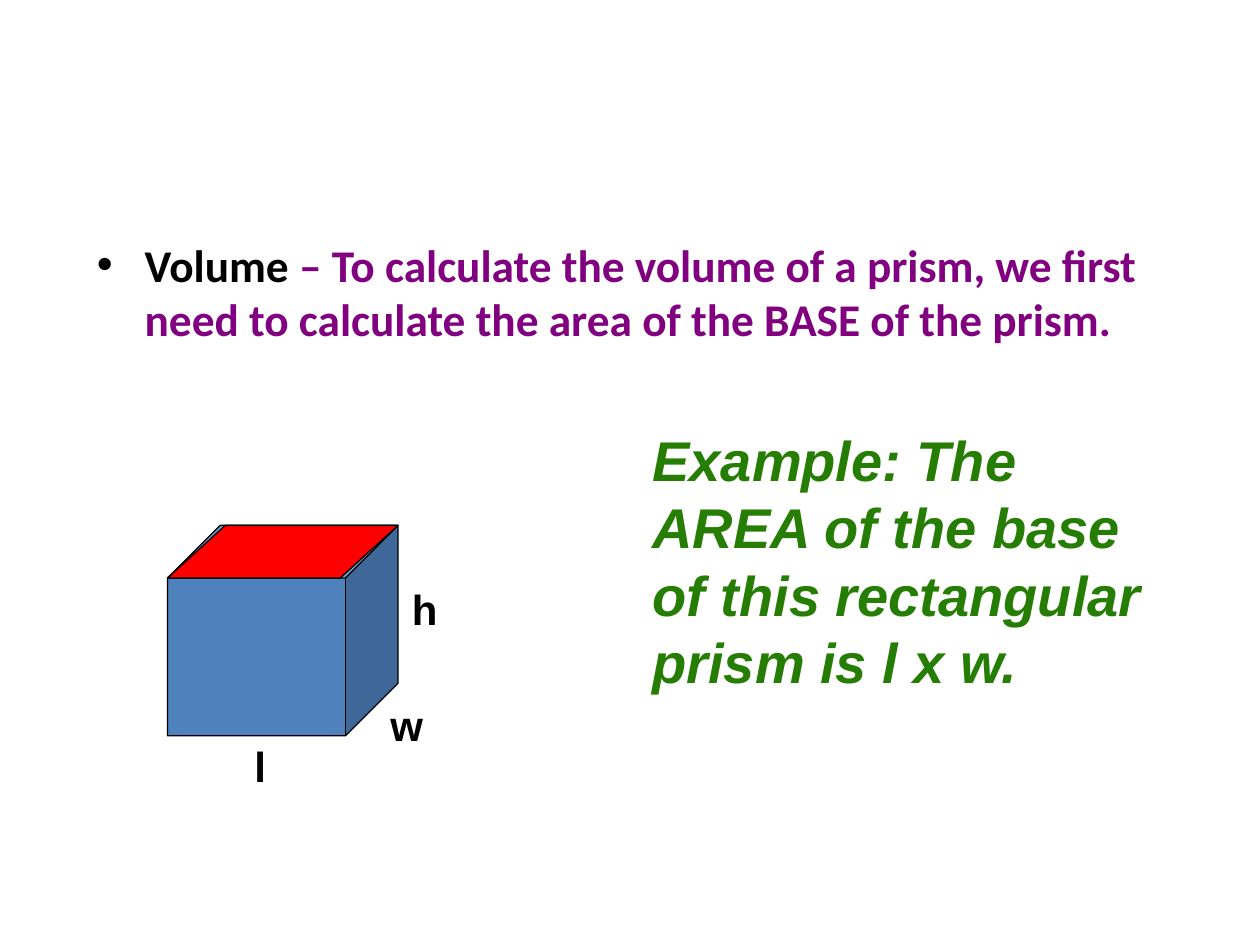
from dataclasses import dataclass

from lxml.etree import SubElement
from pptx import Presentation
from pptx.dml.color import RGBColor
from pptx.enum.shapes import MSO_SHAPE as Preset
from pptx.enum.text import MSO_AUTO_SIZE as AutoSize
from pptx.oxml.ns import qn
from pptx.util import Inches, Pt


@dataclass(frozen=True)
class Theme:
    black: str = "000000"
    purple: str = "800080"
    green: str = "267D03"
    blue: str = "4F81BD"
    red: str = "FF0000"
    body_font: str = "Calibri"
    label_font: str = "Arial"
    body_size: float = 25.9
    example_size: float = 32
    label_size: float = 24
    outline: float = 0.75


THEME = Theme()


def add_run(paragraph, text, color, **formats):
    run = paragraph.add_run()
    run.text = text
    run.font.color.rgb = RGBColor.from_string(color)
    for name, value in formats.items():
        setattr(run.font, name, value)


def add_text(slide, box, runs, wrap=True, grow=True, **formats):
    shape = slide.shapes.add_textbox(*map(Inches, box))
    frame = shape.text_frame
    frame.word_wrap = wrap
    frame.auto_size = AutoSize.SHAPE_TO_FIT_TEXT if grow else AutoSize.NONE
    paragraph = frame.paragraphs[0]
    for text, color in runs:
        add_run(paragraph, text, color, bold=True, **formats)
    return paragraph


def add_bullet(paragraph, indent):
    paragraph.space_before = Pt(2)
    properties = paragraph._p.get_or_add_pPr()
    properties.set("marL", str(Inches(indent)))
    properties.set("indent", str(-Inches(indent)))
    SubElement(properties, qn("a:buFont"), typeface=THEME.label_font)
    SubElement(properties, qn("a:buChar"), char="•")


def add_solid(slide, preset, box, adjustment, color):
    shape = slide.shapes.add_shape(preset, *map(Inches, box))
    shape.adjustments[0] = adjustment
    shape.shadow.inherit = False
    shape.fill.solid()
    shape.fill.fore_color.rgb = RGBColor.from_string(color)
    shape.line.color.rgb = RGBColor.from_string(THEME.black)
    shape.line.width = Pt(THEME.outline)


def add_prism(slide):
    left, top, width, height = 1.33, 4.17, 1.83, 1.67
    labels = [
        ("l", (1.92, 5.83, 0.29, 0.5)),
        ("w", (3, 5.5, 0.46, 0.5)),
        ("h", (3.17, 4.58, 0.4, 0.5)),
    ]
    for text, box in labels:
        add_text(slide, box, [(text, THEME.black)], wrap=False,
                 name=THEME.label_font, size=Pt(THEME.label_size))
    add_solid(slide, Preset.CUBE, (left, top, width, height), 0.25, THEME.blue)
    add_solid(slide, Preset.PARALLELOGRAM, (left, top, width, height / 4),
              1.1, THEME.red)


def main():
    presentation = Presentation()
    presentation.slide_width = Inches(10)
    presentation.slide_height = Inches(7.5)
    slide = presentation.slides.add_slide(presentation.slide_layouts[6])

    definition = [
        ("Volume", THEME.black),
        (" – To calculate the volume of a prism, we first need to calculate "
         "the area of the BASE of the prism.", THEME.purple),
    ]
    paragraph = add_text(slide, (0.67, 1.83, 8.83, 1.17), definition, grow=False,
                         name=THEME.body_font, size=Pt(THEME.body_size))
    add_bullet(paragraph, 0.38)

    example = "Example: The AREA of the base of this rectangular prism is l x w."
    add_text(slide, (5.08, 3.33, 4.43, 2.23), [(example, THEME.green)],
             name=THEME.label_font, size=Pt(THEME.example_size), italic=True)
    add_prism(slide)
    presentation.save("out.pptx")


if __name__ == "__main__":
    main()
